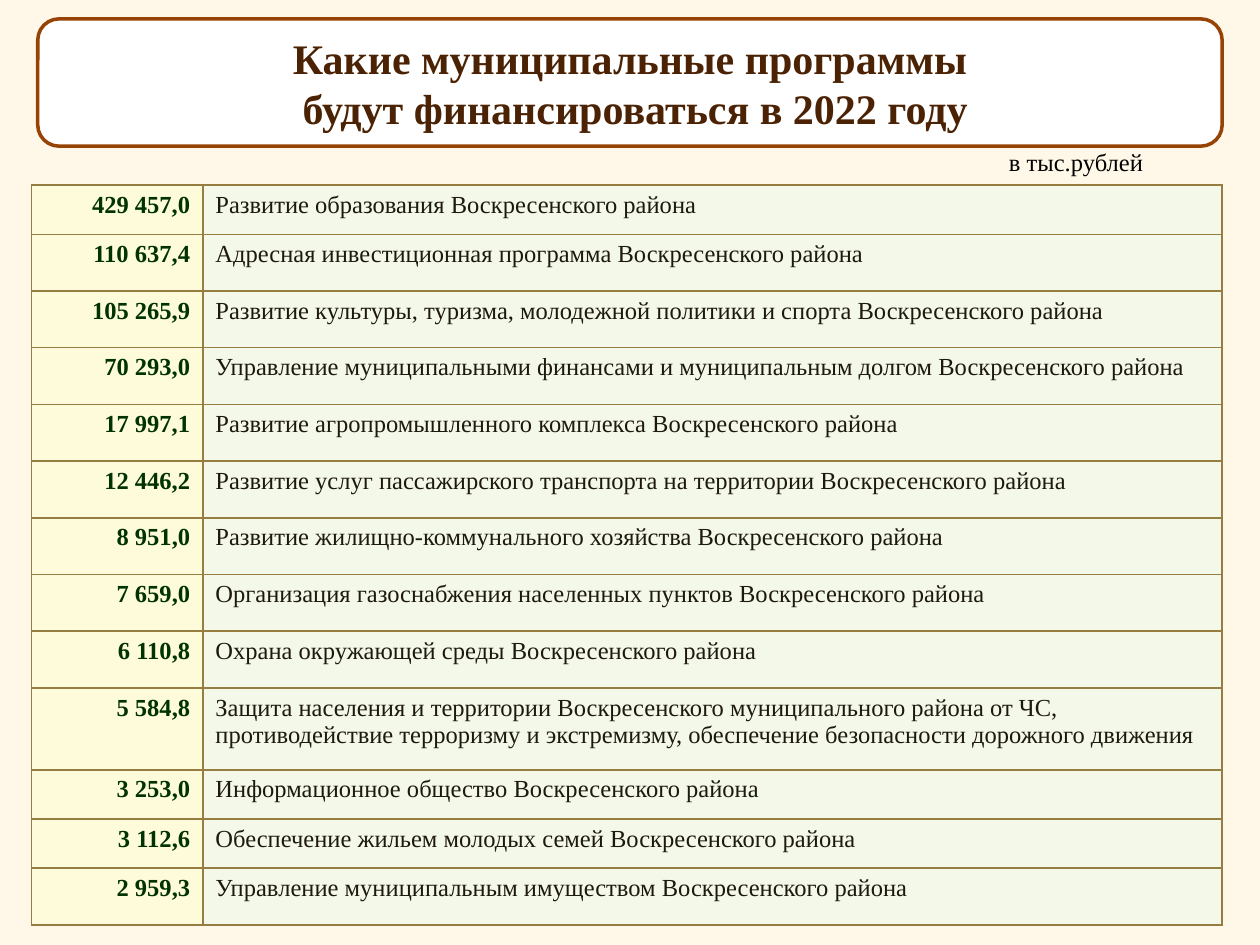
from lxml.etree import SubElement
from pptx import Presentation
from pptx.dml.color import RGBColor
from pptx.enum.shapes import MSO_SHAPE
from pptx.enum.text import MSO_ANCHOR, PP_ALIGN
from pptx.oxml.ns import qn
from pptx.util import Inches, Pt

ROWS = [
    ("429 457,0", "Развитие образования Воскресенского района", 0.39),
    ("110 637,4", "Адресная инвестиционная программа Воскресенского района", 0.45),
    ("105 265,9", "Развитие культуры, туризма, молодежной политики и спорта "
     "Воскресенского района", 0.45),
    ("70 293,0", "Управление муниципальными финансами и муниципальным долгом "
     "Воскресенского района", 0.45),
    ("17 997,1", "Развитие агропромышленного комплекса Воскресенского района", 0.45),
    ("12 446,2", "Развитие услуг пассажирского транспорта на территории "
     "Воскресенского района", 0.45),
    ("8 951,0", "Развитие жилищно-коммунального хозяйства Воскресенского района", 0.45),
    ("7 659,0", "Организация газоснабжения населенных пунктов "
     "Воскресенского района", 0.45),
    ("6 110,8", "Охрана окружающей среды Воскресенского района", 0.45),
    ("5 584,8", "Защита населения и территории Воскресенского муниципального "
     "района от ЧС, противодействие терроризму и экстремизму, обеспечение "
     "безопасности дорожного движения", 0.65),
    ("3 253,0", "Информационное общество Воскресенского района", 0.39),
    ("3 112,6", "Обеспечение жильем молодых семей Воскресенского района", 0.39),
    ("2 959,3", "Управление муниципальным имуществом Воскресенского района", 0.45),
]
WIDTHS = (1.36, 8.09)
SUM = {"size": Pt(14), "bold": True, "name": "Times New Roman"}
NAME = {**SUM, "bold": False}
HEAD = {**SUM, "size": Pt(24)}


def paint(target, color):
    """Give a fill a solid colour."""
    target.solid()
    target.fore_color.rgb = RGBColor.from_string(color)


def write(frame, lines, style, color, align=PP_ALIGN.LEFT):
    """Write one formatted paragraph per line."""
    frame.word_wrap = True
    for i, line in enumerate(lines):
        para = frame.add_paragraph() if i else frame.paragraphs[0]
        para.alignment = align
        run = para.add_run()
        run.text = line
        for key, value in style.items():
            setattr(run.font, key, value)
        run.font.color.rgb = RGBColor.from_string(color)


def border(cell, color, width):
    """Draw all four borders of a cell."""
    props = cell._tc.get_or_add_tcPr()
    for side in ("a:lnL", "a:lnR", "a:lnT", "a:lnB"):
        line = SubElement(props, qn(side), w=str(Pt(width)))
        fill = SubElement(line, qn("a:solidFill"))
        SubElement(fill, qn("a:srgbClr"), val=color)


def add_title(slide, lines):
    """Add the rounded title panel."""
    panel = slide.shapes.add_shape(
        MSO_SHAPE.ROUNDED_RECTANGLE, Inches(0.3), Inches(0.15), Inches(9.4), Inches(1.01))
    panel.shadow.inherit = False
    paint(panel.fill, "FFFFFF")
    paint(panel.line.fill, "964305")
    panel.line.width = Pt(2)
    panel.text_frame.vertical_anchor = MSO_ANCHOR.MIDDLE
    write(panel.text_frame, lines, HEAD, "4B2203", PP_ALIGN.CENTER)


def add_unit(slide, text):
    """Add the caption with the unit of the sums."""
    box = slide.shapes.add_textbox(Inches(7.91), Inches(1.12), Inches(1.97), Inches(0.34))
    write(box.text_frame, [text], NAME, "000000")


def add_sums(slide):
    """Add the table of programmes and their sums."""
    total = sum(high for _, _, high in ROWS)
    table = slide.shapes.add_table(
        len(ROWS), len(WIDTHS), Inches(0.25), Inches(1.47),
        Inches(sum(WIDTHS)), Inches(total)).table
    table.first_row = table.horz_banding = False
    for col, wide in zip(table.columns, WIDTHS):
        col.width = Inches(wide)
    looks = ((SUM, "003300", PP_ALIGN.RIGHT, "FEFBDA"),
             (NAME, "1E190D", PP_ALIGN.LEFT, "F3F8E8"))
    for row, (*texts, high) in zip(table.rows, ROWS):
        row.height = Inches(high)
        for cell, text, (style, color, align, back) in zip(row.cells, texts, looks):
            border(cell, "967D42", 1)
            paint(cell.fill, back)
            write(cell.text_frame, [text], style, color, align)


def main():
    """Build and save the slide."""
    deck = Presentation()
    deck.slide_width, deck.slide_height = Inches(10), Inches(7.5)
    slide = deck.slides.add_slide(deck.slide_layouts[6])
    paint(slide.background.fill, "FFF8E8")
    add_sums(slide)
    add_title(slide, ["Какие муниципальные программы",
                      " будут финансироваться в 2022 году"])
    add_unit(slide, "в тыс.рублей")
    deck.save("out.pptx")


if __name__ == "__main__":
    main()
